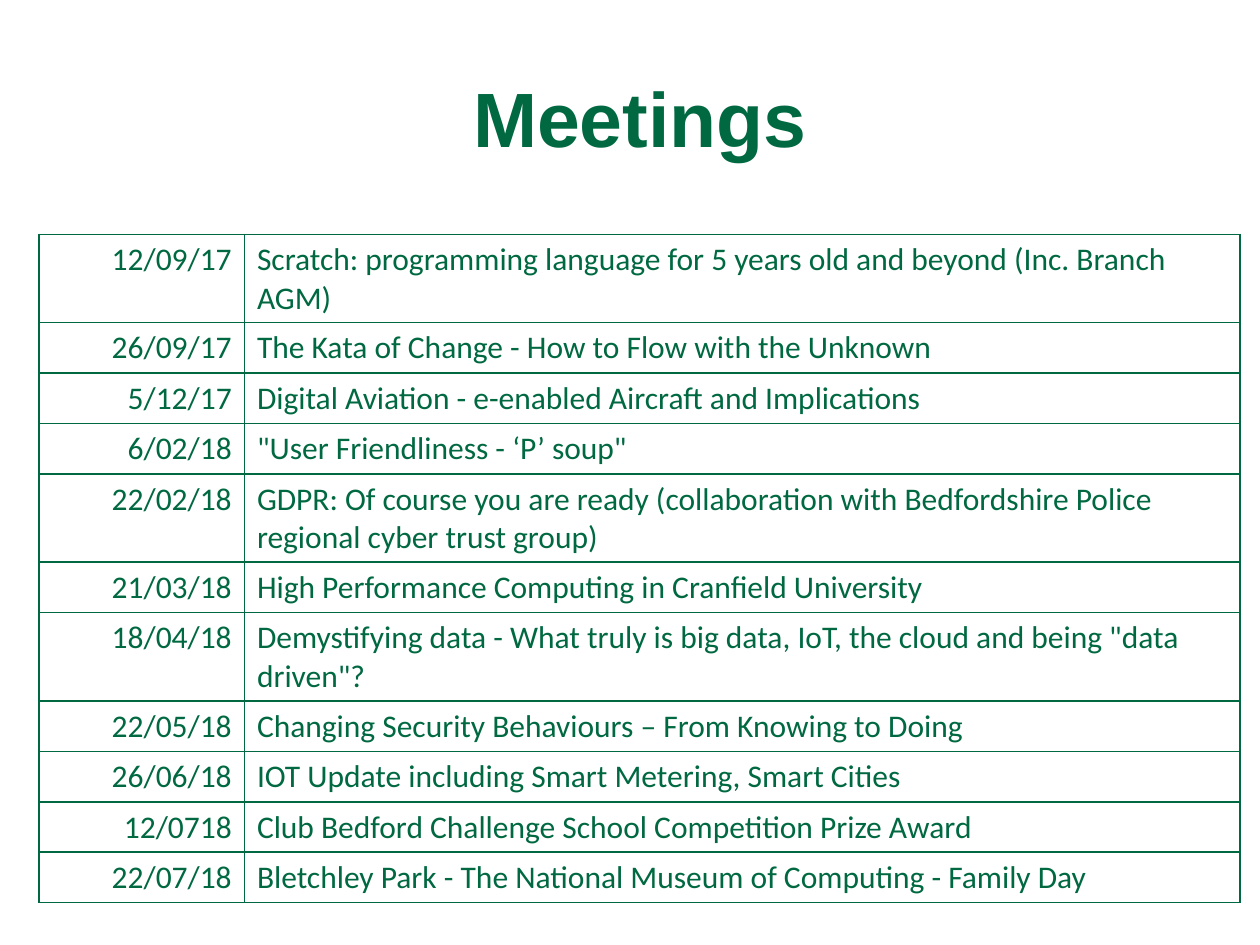
from typing import NamedTuple

import pptx
import pptx.dml.color
import pptx.enum.text
import pptx.oxml
import pptx.oxml.ns
import pptx.util

EMU_PER_PX = 9144  # 100 px to the inch
GREEN = "006941"
ALIGN = pptx.enum.text.PP_ALIGN
ANCHOR = pptx.enum.text.MSO_ANCHOR

TABLE_LEFT, TABLE_TOP = 31, 186
COLUMN_WIDTHS = (163, 790)
LINE_HEIGHT, CELL_PADDING = 30, 10


class Meeting(NamedTuple):
    date: str
    topic: str
    lines: int = 1


MEETINGS = [
    Meeting("12/09/17", "Scratch: programming language for 5 years old and beyond (Inc. Branch AGM)", 2),
    Meeting("26/09/17", "The Kata of Change - How to Flow with the Unknown"),
    Meeting("5/12/17", "Digital Aviation - e-enabled Aircraft and Implications"),
    Meeting("6/02/18", "\"User Friendliness - ‘P’ soup\""),
    Meeting("22/02/18", "GDPR: Of course you are ready (collaboration with Bedfordshire Police "
                        "regional cyber trust group)", 2),
    Meeting("21/03/18", "High Performance Computing in Cranfield University"),
    Meeting("18/04/18", "Demystifying data - What truly is big data, IoT, the cloud and being "
                        "\"data driven\"?", 2),
    Meeting("22/05/18", "Changing Security Behaviours – From Knowing to Doing"),
    Meeting("26/06/18", "IOT Update including Smart Metering, Smart Cities"),
    Meeting("12/0718", "Club Bedford Challenge School Competition Prize Award"),
    Meeting("22/07/18", "Bletchley Park - The National Museum of Computing - Family Day"),
]


def px(length: int) -> pptx.util.Emu:
    return pptx.util.Emu(length * EMU_PER_PX)


def colour(value: str) -> pptx.dml.color.RGBColor:
    return pptx.dml.color.RGBColor.from_string(value)


def write(frame, text: str, *, size: int, font: str, align=ALIGN.LEFT, bold: bool = False) -> None:
    para = frame.paragraphs[0]
    para.alignment = align
    span = para.add_run()
    span.text = text
    span.font.name = font
    span.font.size = pptx.util.Pt(size)
    span.font.bold = bold
    span.font.color.rgb = colour(GREEN)


def add_title(page, text: str) -> None:
    box = page.shapes.add_textbox(px(256), px(30), px(504), px(125))
    box.text_frame.word_wrap = True
    box.text_frame.vertical_anchor = ANCHOR.MIDDLE
    write(box.text_frame, text, size=44, font="Arial", align=ALIGN.CENTER, bold=True)


def style_cell(cell) -> None:
    """Give the cell a one-point border on every side and no fill."""
    properties = cell._tc.get_or_add_tcPr()
    for side in ("lnL", "lnR", "lnT", "lnB"):
        properties.append(pptx.oxml.parse_xml(
            f'<a:{side} {pptx.oxml.ns.nsdecls("a")} w="{pptx.util.Pt(1)}">'
            f'<a:solidFill><a:srgbClr val="{GREEN}"/></a:solidFill></a:{side}>'))
    cell.fill.background()


def add_meetings(page, meetings: list[Meeting]) -> None:
    heights = [meeting.lines * LINE_HEIGHT + CELL_PADDING for meeting in meetings]
    table = page.shapes.add_table(
        len(meetings), len(COLUMN_WIDTHS), px(TABLE_LEFT), px(TABLE_TOP),
        px(sum(COLUMN_WIDTHS)), px(sum(heights))).table
    table.first_row = False
    table.horz_banding = False
    for column, width in zip(table.columns, COLUMN_WIDTHS):
        column.width = px(width)
    for row, height, meeting in zip(table.rows, heights, meetings):
        row.height = px(height)
        date, topic = row.cells
        write(date.text_frame, meeting.date, size=18, font="Calibri", align=ALIGN.RIGHT)
        write(topic.text_frame, meeting.topic, size=18, font="Calibri")
        for cell in (date, topic):
            style_cell(cell)


def main() -> None:
    deck = pptx.Presentation()
    deck.slide_width, deck.slide_height = px(1000), px(750)
    page = deck.slides.add_slide(deck.slide_layouts[6])
    add_title(page, "Meetings")
    add_meetings(page, MEETINGS)
    deck.save("out.pptx")


if __name__ == "__main__":
    main()
